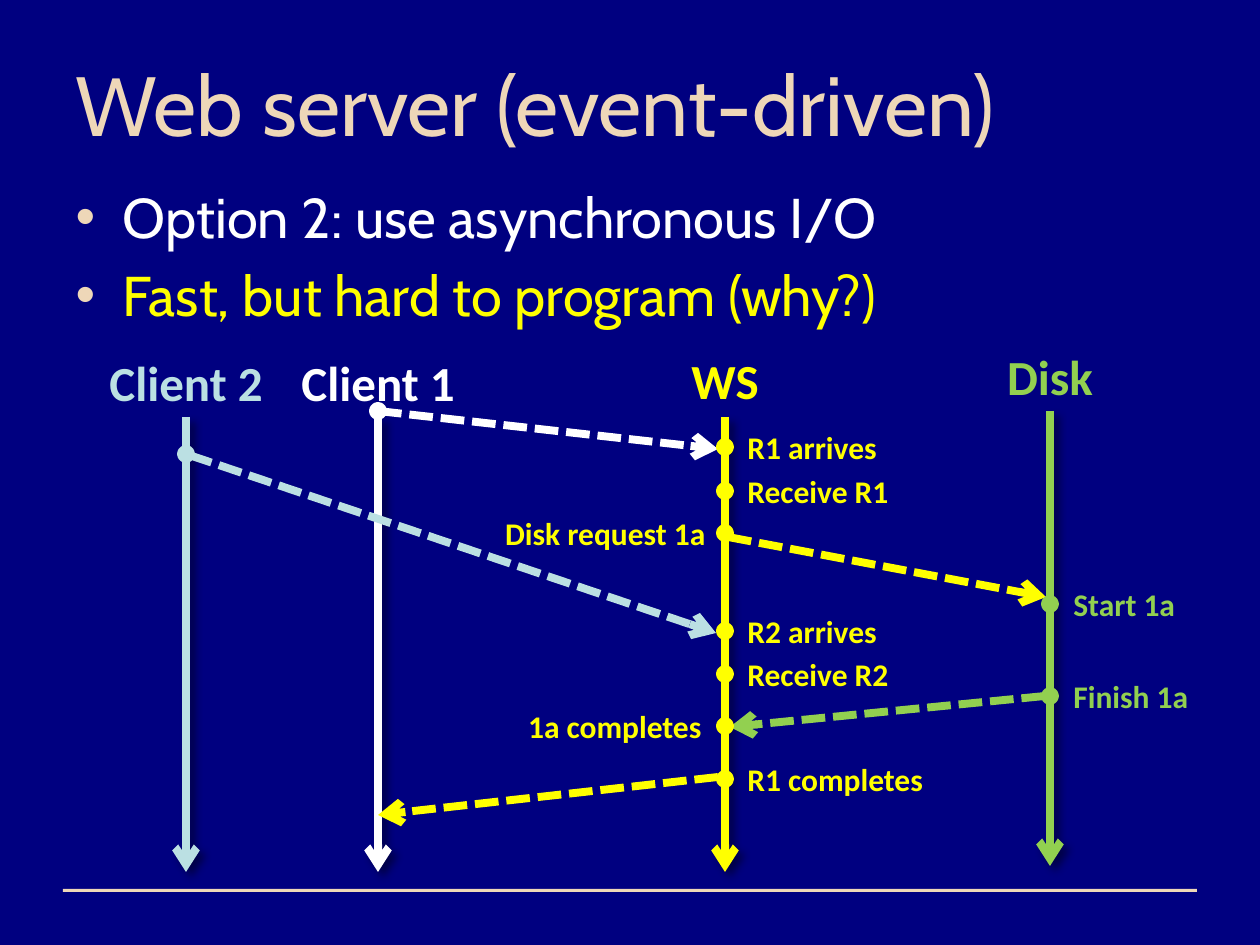
"""Build the slide on an event-driven web server with its message timeline."""
from dataclasses import dataclass

from lxml.etree import SubElement
from pptx import Presentation
from pptx.dml.color import RGBColor as RGB
from pptx.enum.dml import MSO_LINE_DASH_STYLE as Dash
from pptx.enum.shapes import MSO_CONNECTOR as Connector, MSO_SHAPE as Shape
from pptx.enum.text import MSO_ANCHOR as Anchor, MSO_AUTO_SIZE as AutoSize, PP_ALIGN as Align
from pptx.oxml.ns import qn
from pptx.util import Emu, Pt


@dataclass(frozen=True)
class Theme:
    navy: str = "000080"
    sand: str = "EED7B8"
    white: str = "FFFFFF"
    yellow: str = "FFFF00"
    green: str = "92D050"
    blue: str = "BBE0E3"
    heading_font: str = "Cabin"
    label_font: str = "Calibri"
    title_size: int = 48
    body_size: int = 32
    actor_size: int = 28
    event_size: int = 18
    line_width: float = 4.5


theme = Theme()
SCALE = 914400 / 126


def px(*lengths):
    return [Emu(round(length * SCALE)) for length in lengths]


def add_run(paragraph, text, font_name, size, color, bold=False):
    run = paragraph.add_run()
    run.text = text
    run.font.name = font_name
    run.font.size = Pt(size)
    run.font.bold = bold
    run.font.color.rgb = RGB.from_string(color)


presentation = Presentation()
presentation.slide_width, presentation.slide_height = px(1260, 945)
slide = presentation.slides.add_slide(presentation.slide_layouts[1])
slide.background.fill.solid()
slide.background.fill.fore_color.rgb = RGB.from_string(theme.navy)

title, body = slide.placeholders
for placeholder, box in ((title, (63, 38, 1134, 130)), (body, (63, 176, 1050, 675))):
    placeholder.left, placeholder.top, placeholder.width, placeholder.height = px(*box)
    placeholder.text_frame.auto_size = AutoSize.NONE

title.text_frame.vertical_anchor = Anchor.MIDDLE
heading = title.text_frame.paragraphs[0]
heading.alignment = Align.LEFT
add_run(heading, "Web server (event-driven)", theme.heading_font, theme.title_size, theme.sand)

points = [
    ("Option 2: use asynchronous I/O", theme.white),
    ("Fast, but hard to program (why?)", theme.yellow),
]
for index, (text, color) in enumerate(points):
    paragraph = body.text_frame.add_paragraph() if index else body.text_frame.paragraphs[0]
    add_run(paragraph, text, theme.heading_font, theme.body_size, color)
    bullet_color = SubElement(paragraph._p.get_or_add_pPr(), qn("a:buClr"))
    SubElement(bullet_color, qn("a:srgbClr"), val=theme.sand)

footer_rule = slide.shapes.add_shape(Shape.RECTANGLE, *px(63, 889, 1134, 3))
footer_rule.shadow.inherit = False
footer_rule.fill.solid()
footer_rule.fill.fore_color.rgb = RGB.from_string(theme.sand)
footer_rule.line.fill.background()

CLIENT_2, CLIENT_1, SERVER, DISK = 186, 378, 725, 1050
LIFELINE = 455

# name, color, x, label top, lifeline top
actors = [
    ("Client 2", theme.blue, CLIENT_2, 346, 417),
    ("Client 1", theme.white, CLIENT_1, 346, 417),
    ("WS", theme.yellow, SERVER, 344, 417),
    ("Disk", theme.green, DISK, 340, 411),
]
messages = [
    (theme.white, CLIENT_1, 411, 718, 449),
    (theme.blue, 189, 455, 716, 633),
    (theme.yellow, 728, 537, 1046, 597),
    (theme.green, 1045, 696, 730, 727),
    (theme.yellow, 718, 777, CLIENT_1, 815),
]
events = [
    ("R1 arrives", SERVER, 447, 735, 252, Align.LEFT),
    ("Receive R1", SERVER, 491, 735, 252, Align.LEFT),
    ("Disk request 1a", SERVER, 533, 466, 252, Align.RIGHT),
    ("R2 arrives", SERVER, 631, 735, 252, Align.LEFT),
    ("Receive R2", SERVER, 674, 735, 252, Align.LEFT),
    ("1a completes", SERVER, 726, 462, 252, Align.RIGHT),
    ("R1 completes", SERVER, 779, 735, 252, Align.LEFT),
    ("Start 1a", DISK, 604, 1061, 199, Align.LEFT),
    ("Finish 1a", DISK, 696, 1061, 147, Align.LEFT),
]
actor_colors = {x: color for name, color, x, label_top, line_top in actors}

arrows = [(color, x, top, x, top + LIFELINE, False) for name, color, x, label_top, top in actors]
arrows += [(*message, True) for message in messages]
for color, *ends, is_message in arrows:
    arrow = slide.shapes.add_connector(Connector.STRAIGHT, *px(*ends))
    arrow.line.color.rgb = RGB.from_string(color)
    arrow.line.width = Pt(theme.line_width)
    if is_message:
        arrow.line.dash_style = Dash.SQUARE_DOT
    properties = arrow._element.spPr
    SubElement(properties.find(qn("a:ln")), qn("a:tailEnd"), type="arrow")
    effects = SubElement(properties, qn("a:effectLst"))
    if not is_message:
        shadow = SubElement(effects, qn("a:outerShdw"), blurRad="63500", dist="50800", dir="2700000")
        shadow_color = SubElement(shadow, qn("a:srgbClr"), val="000000")
        SubElement(shadow_color, qn("a:alpha"), val="43000")

dots = [(CLIENT_1, 411), (CLIENT_2, 454)] + [(x, y) for text, x, y, *label in events]
for x, y in dots:
    dot = slide.shapes.add_shape(Shape.OVAL, *px(x - 5, y - 5, 10, 10))
    dot.shadow.inherit = False
    dot.fill.solid()
    dot.fill.fore_color.rgb = dot.line.color.rgb = RGB.from_string(actor_colors[x])
    dot.line.width = Pt(theme.line_width)

labels = [
    (name, color, (x - 115, top, 230, 72), theme.actor_size, Align.CENTER)
    for name, color, x, top, line_top in actors
]
labels += [
    (text, actor_colors[x], (left, y - 25, width, 50), theme.event_size, alignment)
    for text, x, y, left, width, alignment in events
]
for text, color, box, size, alignment in labels:
    label = slide.shapes.add_textbox(*px(*box))
    label.text_frame.word_wrap = True
    label.text_frame.auto_size = AutoSize.SHAPE_TO_FIT_TEXT
    paragraph = label.text_frame.paragraphs[0]
    paragraph.alignment = alignment
    add_run(paragraph, text, theme.label_font, size, color, bold=True)

presentation.save("out.pptx")
